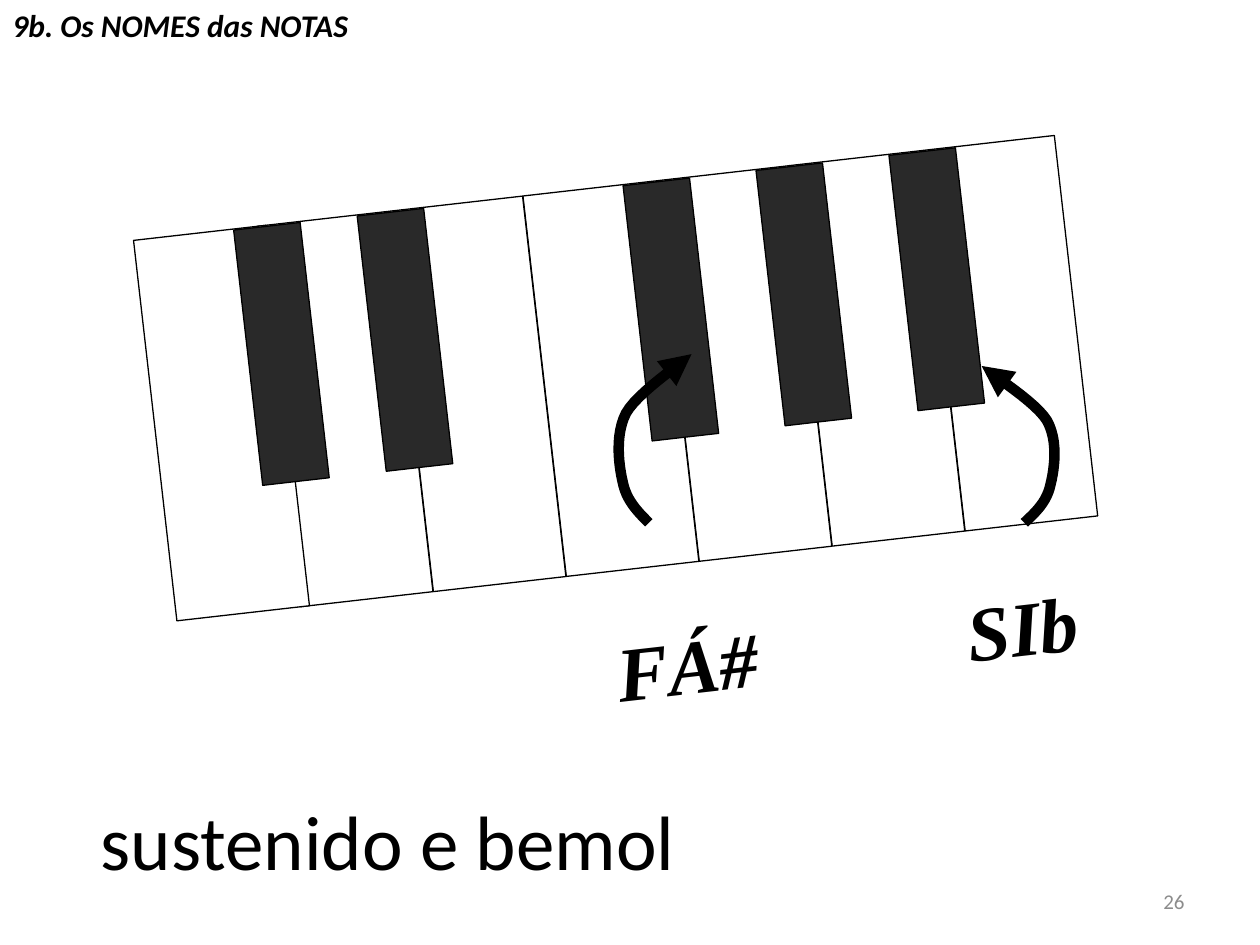
from lxml import etree
from pptx import Presentation
from pptx.dml.color import RGBColor
from pptx.enum.shapes import MSO_SHAPE as Shape
from pptx.enum.text import MSO_ANCHOR as Anchor, MSO_AUTO_SIZE as AutoSize, PP_ALIGN as Align
from pptx.oxml.ns import qn
from pptx.util import Cm, Pt

COLORS = {"white": "FFFFFF", "black": "000000", "black_key": "292929", "number": "8C8C8C"}
TILT = -6.5
SLOPE = 0.114  # rise of the tilted keyboard per unit of width

KEY_WIDTH, KEY_HEIGHT = 2.69, 7.72
BLACK_WIDTH, BLACK_HEIGHT = 1.35, 5.18
KEYBOARD_LEFT, KEYBOARD_TOP = 3.12, 4.67
WHITE_LEFTS = [KEYBOARD_LEFT] + [5.61 + 2.68 * step for step in range(6)]
KEYS_BEFORE_BLACK = (0, 1, 3, 4, 5)

# Bezier control points of the arrow that bends left, relative to its start
ARROW_CURVE = [
    (0, 0), (-0.23, -0.23), (-0.46, -0.46), (-0.53, -0.84),
    (-0.61, -1.19), (-0.68, -1.78), (-0.46, -2.21),
    (-0.23, -2.62), (0.64, -3.2), (0.86, -3.4),
]


def color(name):
    return RGBColor.from_string(COLORS[name])


def add_tilted_box(slide, left, top, width, height, fill, line):
    shape = slide.shapes.add_shape(Shape.RECTANGLE, Cm(left), Cm(top), Cm(width), Cm(height))
    shape.shadow.inherit = False
    shape.rotation = TILT
    shape.fill.solid()
    shape.fill.fore_color.rgb = color(fill)
    shape.line.color.rgb = color(line)
    shape.line.width = Pt(0.75)
    return shape


def add_run(paragraph, text, size, font="Calibri", ink="black", emphasis=False):
    """Add a run; emphasis makes it bold and italic."""
    run = paragraph.add_run()
    run.text = text
    run.font.name = font
    run.font.size = Pt(size)
    run.font.bold = run.font.italic = emphasis
    run.font.color.rgb = color(ink)


def add_text(slide, left, top, width, height, text, size, align=Align.LEFT,
             anchor=Anchor.TOP, wrap=True, grow=True, **style):
    frame = slide.shapes.add_textbox(Cm(left), Cm(top), Cm(width), Cm(height)).text_frame
    frame.word_wrap = wrap
    frame.auto_size = AutoSize.SHAPE_TO_FIT_TEXT if grow else AutoSize.NONE
    frame.vertical_anchor = anchor
    paragraph = frame.paragraphs[0]
    paragraph.alignment = align
    add_run(paragraph, text, size, **style)


def add_note_names(slide):
    """Write both note names on one tilted line, the second at a tab stop."""
    box = add_tilted_box(slide, 11.56, 11.76, 11, 3.05, "white", "white")
    frame = box.text_frame
    frame.vertical_anchor = Anchor.TOP
    frame.margin_left, frame.margin_top = Cm(0.88), Cm(0.33)
    paragraph = frame.paragraphs[0]
    paragraph.alignment = Align.LEFT
    tabs = etree.SubElement(paragraph._p.get_or_add_pPr(), qn("a:tabLst"))
    etree.SubElement(tabs, qn("a:tab"), pos=str(Cm(7.1)), algn="l")
    add_run(paragraph, "FÁ#\tSIb", 44, font="Times New Roman", emphasis=True)


def add_keyboard(slide):
    def add_key(left, top, width, height, fill):
        top -= SLOPE * (left - KEYBOARD_LEFT)
        add_tilted_box(slide, left, top, width, height, fill, "black")

    for left in reversed(WHITE_LEFTS):
        add_key(left, KEYBOARD_TOP, KEY_WIDTH, KEY_HEIGHT, "white")
    for index in KEYS_BEFORE_BLACK:
        left = WHITE_LEFTS[index] + KEY_WIDTH - 0.81
        add_key(left, KEYBOARD_TOP + 0.09, BLACK_WIDTH, BLACK_HEIGHT, "black_key")


def bezier_points(controls, steps=12):
    """Sample a chain of cubic curves, leaving out the start point."""
    for first in range(0, len(controls) - 1, 3):
        segment = controls[first:first + 4]
        for step in range(1, steps + 1):
            t = step / steps
            weights = ((1 - t) ** 3, 3 * t * (1 - t) ** 2, 3 * t ** 2 * (1 - t), t ** 3)
            yield tuple(sum(w * point[axis] for w, point in zip(weights, segment))
                        for axis in (0, 1))


def add_curved_arrow(slide, left, top, side=1, stretch=1):
    """Draw the bent arrow; side -1 mirrors it, stretch scales its height."""
    builder = slide.shapes.build_freeform(Cm(left), Cm(top))
    builder.add_line_segments(
        [(Cm(left + side * x), Cm(top + stretch * y)) for x, y in bezier_points(ARROW_CURVE)],
        close=False,
    )
    arrow = builder.convert_to_shape()
    arrow.shadow.inherit = False
    arrow.fill.background()
    arrow.line.color.rgb = color("black")
    arrow.line.width = Pt(6)
    etree.SubElement(arrow.line._get_or_add_ln(), qn("a:tailEnd"), type="triangle")


def main():
    presentation = Presentation()
    presentation.slide_width, presentation.slide_height = Cm(25.4), Cm(19.05)
    slide = presentation.slides.add_slide(presentation.slide_layouts[6])

    add_note_names(slide)
    add_keyboard(slide)
    add_curved_arrow(slide, 13.08, 10.54)
    add_curved_arrow(slide, 20.65, 10.54, side=-1, stretch=0.93)
    add_text(slide, 0, 0, 7.37, 1.02, "9b. Os NOMES das NOTAS", 18, wrap=False, emphasis=True)
    add_text(slide, 1.78, 15.88, 13.28, 2.13, "sustenido e bemol", 44)
    add_text(slide, 18.2, 17.65, 5.93, 1.02, "26", 12, align=Align.RIGHT,
             anchor=Anchor.MIDDLE, grow=False, ink="number")

    presentation.save("out.pptx")


if __name__ == "__main__":
    main()
